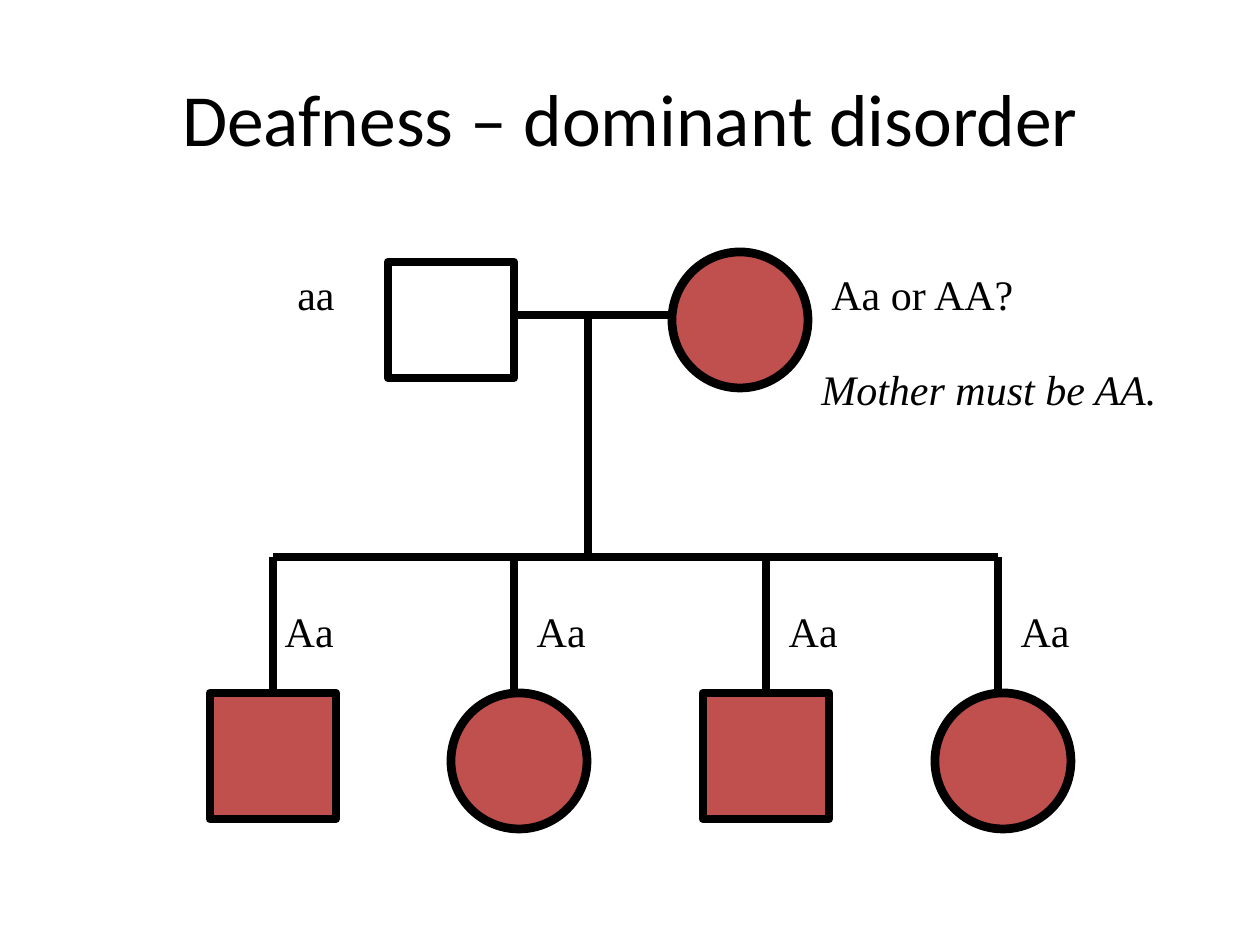
from lxml.etree import SubElement
from pptx import Presentation
from pptx.dml.color import RGBColor
from pptx.enum.shapes import MSO_CONNECTOR, MSO_SHAPE
from pptx.enum.text import MSO_ANCHOR, MSO_AUTO_SIZE, PP_ALIGN
from pptx.oxml.ns import qn
from pptx.util import Emu, Pt

SCALE = 914400 / 126
INK = "000000"
RED = "C0504D"
LABEL = {"name": "Times New Roman", "size": Pt(24)}
TITLE = {"name": "Calibri", "size": Pt(42)}


def px(*vals):
    """Turn whole pixels into EMU lengths."""
    return [Emu(round(val * SCALE)) for val in vals]


def paint(color, code):
    """Set a colour format from a hex string."""
    color.rgb = RGBColor.from_string(code)


def assign(item, form):
    """Set each attribute of an item from a dict."""
    for key, val in form.items():
        setattr(item, key, val)


def stroke(line):
    """Give a line the heavy black pedigree stroke."""
    paint(line.fill.fore_color if line.fill.solid() else line.color, INK)
    line.width = Pt(5)


def write(frame, text, align, font):
    """Write one styled paragraph into a text frame."""
    para = frame.paragraphs[0]
    para.alignment = align
    run = para.add_run()
    run.text = text
    assign(run.font, font)
    paint(run.font.color, INK)


def add_title(slide, text):
    """Place and fill the title placeholder."""
    title = slide.shapes.title
    left, top, width, height = px(63, 38, 1134, 158)
    assign(title, {"left": left, "top": top, "width": width, "height": height})
    title.text_frame.vertical_anchor = MSO_ANCHOR.MIDDLE
    write(title.text_frame, text, PP_ALIGN.CENTER, TITLE)


def add_label(slide, text, box, align=PP_ALIGN.LEFT, **extra):
    """Add a genotype label or remark."""
    frame = slide.shapes.add_textbox(*px(*box)).text_frame
    assign(frame, {"word_wrap": True, "auto_size": MSO_AUTO_SIZE.SHAPE_TO_FIT_TEXT})
    write(frame, text, align, LABEL | extra)


def add_person(slide, kind, box, fill=RED):
    """Add a square for a male or a circle for a female."""
    shape = slide.shapes.add_shape(kind, *px(*box))
    shape.shadow.inherit = False
    if fill:
        shape.fill.solid()
        paint(shape.fill.fore_color, fill)
    else:
        shape.fill.background()
    stroke(shape.line)
    return shape


def add_link(slide, ends, person=None):
    """Add a family line, joined to the top of a person if given."""
    link = slide.shapes.add_connector(MSO_CONNECTOR.STRAIGHT, *px(*ends))
    stroke(link.line)
    SubElement(link._element.spPr, qn("a:effectLst"))
    if person is not None:
        link.end_connect(person, 0)


def add_child(slide, left, male):
    """Add a child with its stem and genotype."""
    kind, size = (MSO_SHAPE.RECTANGLE, 126) if male else (MSO_SHAPE.OVAL, 136)
    child = add_person(slide, kind, (left, 693, size, size))
    stem = left + 63
    add_link(slide, (stem, 557, stem, 693), child if male else None)
    add_label(slide, "Aa", (left if left > 210 else 199, 599, 147, 63), PP_ALIGN.RIGHT)


def main():
    """Build the pedigree slide."""
    deck = Presentation()
    size = px(1260, 945)
    assign(deck, {"slide_width": size[0], "slide_height": size[1]})
    slide = deck.slides.add_slide(deck.slide_layouts[5])
    add_title(slide, "Deafness – dominant disorder")
    add_person(slide, MSO_SHAPE.RECTANGLE, (388, 262, 126, 116), None)
    add_person(slide, MSO_SHAPE.OVAL, (672, 252, 136, 136))
    for ends in ((514, 315, 672, 315), (588, 315, 588, 557), (273, 557, 998, 557)):
        add_link(slide, ends)
    for left, male in ((210, True), (451, False), (703, True), (935, False)):
        add_child(slide, left, male)
    add_label(slide, "aa", (168, 262, 179, 63), PP_ALIGN.RIGHT)
    add_label(slide, "Aa or AA?", (819, 262, 221, 63))
    add_label(slide, "Mother must be AA.", (809, 357, 388, 63), italic=True)
    deck.save("out.pptx")


if __name__ == "__main__":
    main()
